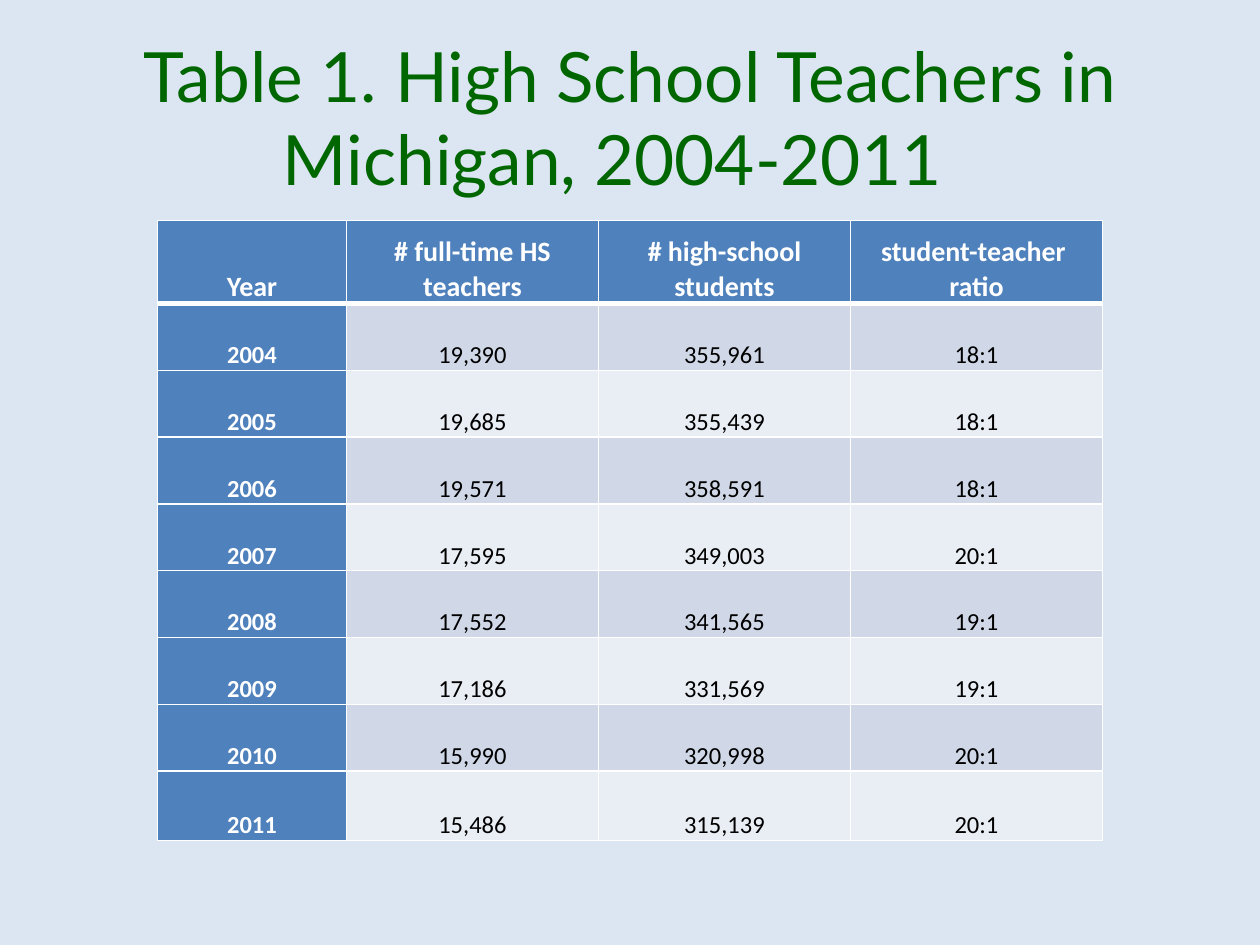
from typing import NamedTuple

from lxml import etree
from pptx import Presentation
from pptx.dml.color import RGBColor
from pptx.enum.text import MSO_ANCHOR, MSO_AUTO_SIZE, PP_ALIGN
from pptx.oxml.ns import qn
from pptx.util import Inches, Pt

CENTER = PP_ALIGN.CENTER
MIDDLE, BOTTOM = MSO_ANCHOR.MIDDLE, MSO_ANCHOR.BOTTOM
NO_AUTOFIT = MSO_AUTO_SIZE.NONE
TITLE_ONLY = 5

COLORS = {
    "background": "DCE6F2",
    "title": "006600",
    "head": "4F81BD",
    "band_dark": "D0D8E8",
    "band_light": "E9EDF4",
    "border": "FFFFFF",
    "head_text": "FFFFFF",
    "body_text": "000000",
}


class YearRow(NamedTuple):
    year: str
    teachers: str
    students: str
    ratio: str


class CellStyle(NamedTuple):
    fill: str
    color: str
    size: float
    bold: bool


HEADINGS = YearRow("Year", "# full-time HS teachers", "# high-school students",
                   "student-teacher \nratio")
YEARS = [
    YearRow("2004", "19,390", "355,961", "18:1"),
    YearRow("2005", "19,685", "355,439", "18:1"),
    YearRow("2006", "19,571", "358,591", "18:1"),
    YearRow("2007", "17,595", "349,003", "20:1"),
    YearRow("2008", "17,552", "341,565", "19:1"),
    YearRow("2009", "17,186", "331,569", "19:1"),
    YearRow("2010", "15,990", "320,998", "20:1"),
    YearRow("2011", "15,486", "315,139", "20:1"),
]
COL_WIDTHS = [1.5, 2, 2, 2]
ROW_HEIGHTS = [0.66] + [0.53] * (len(YEARS) - 1) + [0.55]
HEAD_RULE, THIN_RULE = 3, 1


def rgb(name: str) -> RGBColor:
    return RGBColor.from_string(COLORS[name])


def add_run(p, text: str, font: str, size: float, color: str, bold: bool = False) -> None:
    p.alignment = CENTER
    r = p.add_run()
    r.text = text
    r.font.name, r.font.size, r.font.bold = font, Pt(size), bold
    r.font.color.rgb = rgb(color)


def set_borders(cell, top: float, bottom: float) -> None:
    """Draw the four cell borders; widths are in points."""
    tc_pr = cell._tc.get_or_add_tcPr()
    widths = {"a:lnL": THIN_RULE, "a:lnR": THIN_RULE, "a:lnT": top, "a:lnB": bottom}
    for i, (tag, width) in enumerate(widths.items()):
        ln = etree.Element(qn(tag), w=str(Pt(width)))
        fill = etree.SubElement(ln, qn("a:solidFill"))
        etree.SubElement(fill, qn("a:srgbClr"), val=COLORS["border"])
        tc_pr.insert(i, ln)


def cell_style(row: int, col: int) -> CellStyle:
    if row == 0:
        return CellStyle("head", "head_text", 16, True)
    if col == 0:
        return CellStyle("head", "head_text", 14, True)
    return CellStyle("band_dark" if row % 2 else "band_light", "body_text", 14, False)


def fill_cell(cell, text: str, style: CellStyle) -> None:
    cell.fill.solid()
    cell.fill.fore_color.rgb = rgb(style.fill)
    cell.vertical_anchor = BOTTOM
    cell.margin_left = cell.margin_top = cell.margin_right = Inches(0.01)
    cell.margin_bottom = 0
    tf = cell.text_frame
    for i, line in enumerate(text.split("\n")):
        p = tf.add_paragraph() if i else tf.paragraphs[0]
        add_run(p, line, "Calibri", style.size, style.color, style.bold)


def add_title(s, text: str) -> None:
    sp = s.shapes.title
    sp.left, sp.top, sp.width, sp.height = map(Inches, (0.5, 0.3, 9, 1.25))
    tf = sp.text_frame
    tf.word_wrap, tf.auto_size, tf.vertical_anchor = True, NO_AUTOFIT, MIDDLE
    add_run(tf.paragraphs[0], text, "Lato", 39.6, "title")


def add_teacher_table(s, left: float, top: float) -> None:
    rows = [HEADINGS, *YEARS]
    size = Inches(sum(COL_WIDTHS)), Inches(sum(ROW_HEIGHTS))
    table = s.shapes.add_table(len(rows), len(COL_WIDTHS),
                               Inches(left), Inches(top), *size).table
    table.first_col = True
    for column, width in zip(table.columns, COL_WIDTHS):
        column.width = Inches(width)
    for i, values in enumerate(rows):
        table.rows[i].height = Inches(ROW_HEIGHTS[i])
        for j, text in enumerate(values):
            cell = table.cell(i, j)
            fill_cell(cell, text, cell_style(i, j))
            set_borders(cell, top=HEAD_RULE if i == 1 else THIN_RULE,
                        bottom=HEAD_RULE if i == 0 else THIN_RULE)


def main() -> None:
    prs = Presentation()
    prs.slide_width, prs.slide_height = Inches(10), Inches(7.5)
    s = prs.slides.add_slide(prs.slide_layouts[TITLE_ONLY])
    s.background.fill.solid()
    s.background.fill.fore_color.rgb = rgb("background")
    add_title(s, "Table 1. High School Teachers in Michigan, 2004-2011  ")
    add_teacher_table(s, left=1.25, top=1.75)
    prs.save("out.pptx")


if __name__ == "__main__":
    main()
